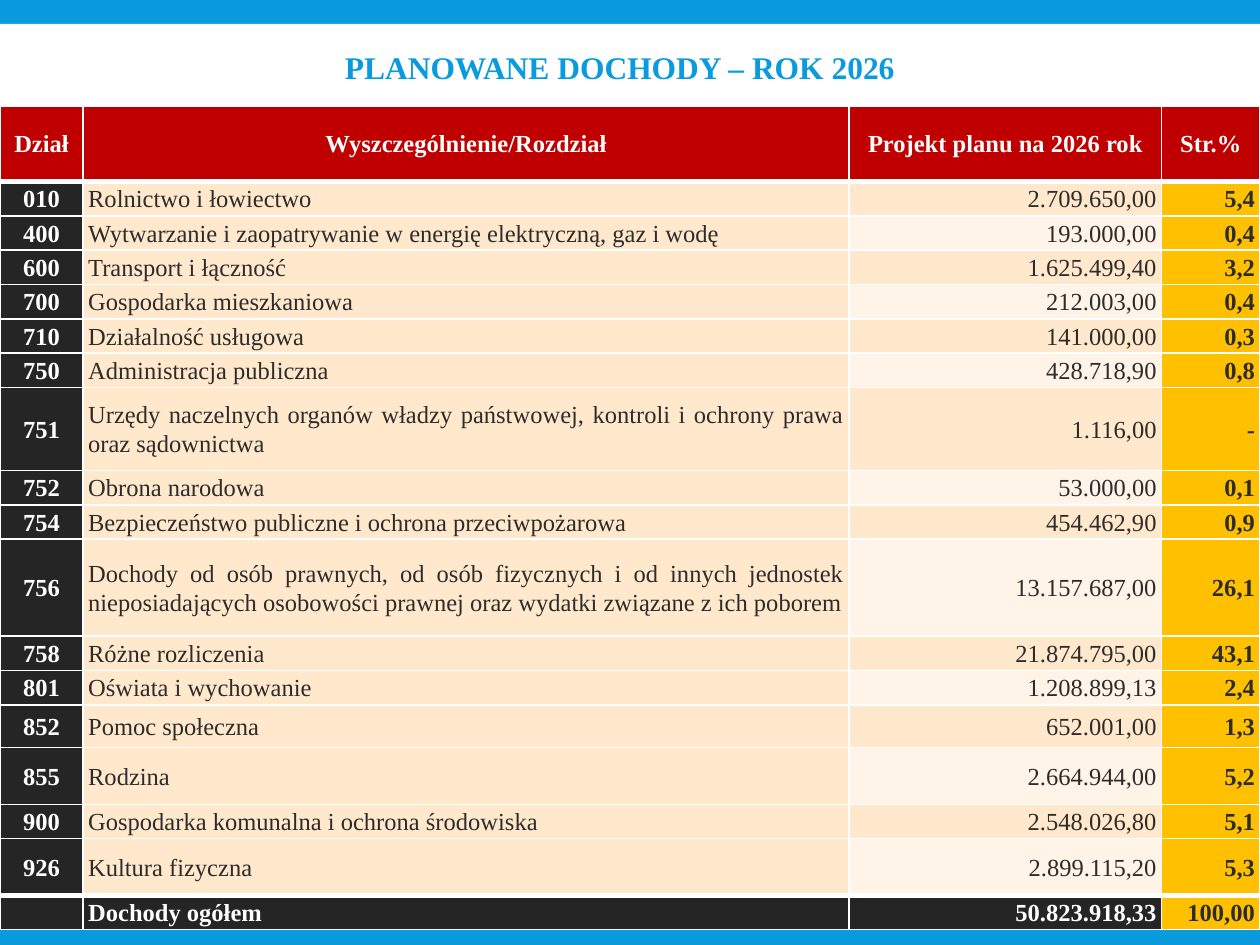
"""Build the slide with the table of planned income for 2026."""
import pptx
import pptx.util
import pptx.dml.color
import pptx.enum.shapes
import pptx.enum.text
import pptx.oxml
import pptx.oxml.ns

Inches, Pt = pptx.util.Inches, pptx.util.Pt
ALIGN, ANCHOR = pptx.enum.text.PP_ALIGN, pptx.enum.text.MSO_ANCHOR

TITLE = "PLANOWANE DOCHODY – ROK 2026"
HEADER = ("Dział", "Wyszczególnienie/Rozdział", "Projekt planu na 2026 rok", "Str.%")
INCOME = [
    ("010", "Rolnictwo i łowiectwo", "2.709.650,00", "5,4"),
    ("400", "Wytwarzanie i zaopatrywanie w energię elektryczną, gaz i wodę", "193.000,00", "0,4"),
    ("600", "Transport i łączność", "1.625.499,40", "3,2"),
    ("700", "Gospodarka mieszkaniowa", "212.003,00", "0,4"),
    ("710", "Działalność usługowa", "141.000,00", "0,3"),
    ("750", "Administracja publiczna", "428.718,90", "0,8"),
    ("751", "Urzędy naczelnych organów władzy państwowej, kontroli i ochrony prawa "
            "oraz sądownictwa", "1.116,00", "-"),
    ("752", "Obrona narodowa", "53.000,00", "0,1"),
    ("754", "Bezpieczeństwo publiczne i ochrona przeciwpożarowa", "454.462,90", "0,9"),
    ("756", "Dochody od osób prawnych, od osób fizycznych i od innych jednostek "
            "nieposiadających osobowości prawnej oraz wydatki związane z ich poborem",
     "13.157.687,00", "26,1"),
    ("758", "Różne rozliczenia", "21.874.795,00", "43,1"),
    ("801", "Oświata i wychowanie", "1.208.899,13", "2,4"),
    ("852", "Pomoc społeczna", "652.001,00", "1,3"),
    ("855", "Rodzina", "2.664.944,00", "5,2"),
    ("900", "Gospodarka komunalna i ochrona środowiska", "2.548.026,80", "5,1"),
    ("926", "Kultura fizyczna", "2.899.115,20", "5,3"),
]
TOTAL = ("", "Dochody ogółem", "50.823.918,33", "100,00")
ROWS = [HEADER, *INCOME, TOTAL]
LAST = len(ROWS) - 1

FONT = "Times New Roman"
BLUE, RED, BLACK, GOLD = "099BDD", "C00000", "252525", "FFC000"
PEACH, CREAM, WHITE, TEXT = "FFE8CC", "FFF4E7", "FFFFFF", "2C2C2C"
COL_WIDTHS = (0.66, 6.08, 2.48, 0.78)
COL_ALIGN = (ALIGN.CENTER, ALIGN.JUSTIFY, ALIGN.RIGHT, ALIGN.RIGHT)
TABLE_TOP, TABLE_HEIGHT = 0.84, 6.54
TALL_ROWS = {"Dział": 0.6, "751": 0.66, "756": 0.77, "852": 0.34, "855": 0.45, "926": 0.45}
ROW_HEIGHT = (TABLE_HEIGHT - sum(TALL_ROWS.values())) / (len(ROWS) - len(TALL_ROWS))


def rgb(color):
    return pptx.dml.color.RGBColor.from_string(color)


def set_fill(sp, color):
    sp.fill.solid()
    sp.fill.fore_color.rgb = rgb(color)


def format_text(p, text, size, color, bold, align, spacing):
    p.text = text
    p.alignment, p.line_spacing = align, spacing
    f = p.font
    f.name, f.size, f.bold = FONT, Pt(size), bold
    f.color.rgb = rgb(color)


def cell_style(row, col):
    """Return fill, text colour and boldness of a cell."""
    if row == 0:
        return RED, WHITE, True
    if col == 3:
        return GOLD, TEXT, True
    if col == 0 or row == LAST:
        return BLACK, WHITE, True
    return (CREAM if col == 2 and row % 2 == 0 else PEACH), TEXT, False


def set_borders(cell, row):
    top = 3 if row in (1, LAST) else 1
    bottom = 3 if row in (0, LAST - 1) else 1
    tc_pr = cell._tc.get_or_add_tcPr()
    for i, (side, width) in enumerate((("L", 1), ("R", 1), ("T", top), ("B", bottom))):
        tc_pr.insert(i, pptx.oxml.parse_xml(
            f'<a:ln{side} {pptx.oxml.ns.nsdecls("a")} w="{Pt(width)}"><a:solidFill>'
            f'<a:srgbClr val="{WHITE}"/></a:solidFill></a:ln{side}>'))


def add_title(s):
    tf = s.shapes.add_textbox(Inches(0.98), Inches(0.29), Inches(7.88), Inches(1.22)).text_frame
    tf.word_wrap = True
    tf.vertical_anchor = ANCHOR.TOP
    tf.margin_top = Inches(0.14)
    format_text(tf.paragraphs[0], TITLE, 18, BLUE, True, ALIGN.CENTER, 0.85)


def add_income_table(s):
    table = s.shapes.add_table(len(ROWS), len(HEADER), 0, Inches(TABLE_TOP),
                               Inches(10), Inches(TABLE_HEIGHT)).table
    for column, width in zip(table.columns, COL_WIDTHS):
        column.width = Inches(width)
    for row, texts in enumerate(ROWS):
        table.rows[row].height = Inches(TALL_ROWS.get(texts[0], ROW_HEIGHT))
        for col, text in enumerate(texts):
            cell = table.cell(row, col)
            fill, color, bold = cell_style(row, col)
            align = COL_ALIGN[col] if row else ALIGN.CENTER
            cell.vertical_anchor = ANCHOR.MIDDLE
            cell.margin_left = cell.margin_right = Inches(0.04)
            cell.margin_top = cell.margin_bottom = 0
            format_text(cell.text_frame.paragraphs[0], text, 14, color, bold, align, 1.07)
            set_fill(cell, fill)
            set_borders(cell, row)


def main():
    prs = pptx.Presentation()
    prs.slide_width, prs.slide_height = Inches(10), Inches(7.5)
    s = prs.slides.add_slide(prs.slide_layouts[6])
    set_fill(s.background, BLUE)
    panel = s.shapes.add_shape(pptx.enum.shapes.MSO_SHAPE.RECTANGLE,
                               0, Inches(0.19), Inches(10), Inches(1.8))
    panel.shadow.inherit = False
    set_fill(panel, WHITE)
    panel.line.fill.background()
    add_title(s)
    add_income_table(s)
    prs.save("out.pptx")


if __name__ == "__main__":
    main()
